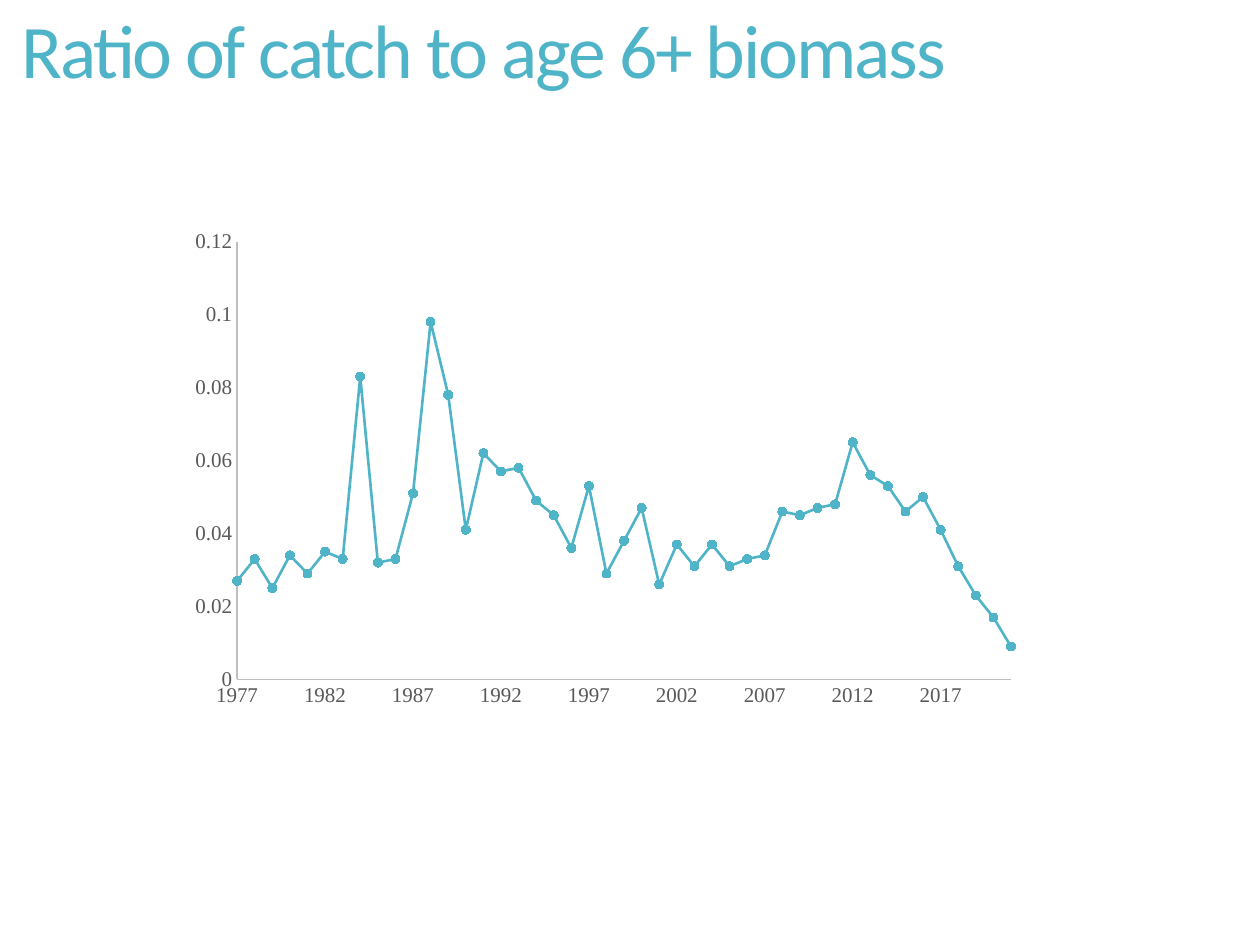
from dataclasses import dataclass

from lxml import etree
from pptx import Presentation
from pptx.chart import data as cd
from pptx.dml.color import RGBColor
from pptx.enum import chart as ce, text as te
from pptx.oxml import ns
from pptx.util import Inches, Pt

TEAL = RGBColor(0x50, 0xB4, 0xC8)
GREY = RGBColor(0x59, 0x59, 0x59)
RULE = RGBColor(0xBF, 0xBF, 0xBF)
FONT = "Times New Roman"

START = 1977
RATIOS = [
    0.027, 0.033, 0.025, 0.034, 0.029, 0.035, 0.033, 0.083, 0.032,
    0.033, 0.051, 0.098, 0.078, 0.041, 0.062, 0.057, 0.058, 0.049,
    0.045, 0.036, 0.053, 0.029, 0.038, 0.047, 0.026, 0.037, 0.031,
    0.037, 0.031, 0.033, 0.034, 0.046, 0.045, 0.047, 0.048, 0.065,
    0.056, 0.053, 0.046, 0.05, 0.041, 0.031, 0.023, 0.017, 0.009,
]


@dataclass
class Scale:
    low: float
    high: float
    step: float
    form: str


def add_title(slide, words: str) -> None:
    title = slide.shapes.title
    title.left, title.top = Inches(0.07), Inches(0.11)
    title.width, title.height = Inches(8.84), Inches(0.63)
    frame = title.text_frame
    frame.auto_size = te.MSO_AUTO_SIZE.NONE
    frame.vertical_anchor = te.MSO_ANCHOR.MIDDLE
    para = frame.paragraphs[0]
    para.alignment = te.PP_ALIGN.LEFT
    para.line_spacing = 0.9
    run = para.add_run()
    run.text = words
    run.font.name = "Calibri"
    run.font.size = Pt(43.2)
    run.font.color.rgb = TEAL
    run.font._element.set("spc", "-120")


def style_axis(axis, scale: Scale) -> None:
    axis.minimum_scale, axis.maximum_scale = scale.low, scale.high
    axis.major_unit = scale.step
    axis.has_major_gridlines = False
    axis.major_tick_mark = axis.minor_tick_mark = ce.XL_TICK_MARK.NONE
    axis.format.line.color.rgb = RULE
    axis.format.line.width = Pt(0.75)
    labels = axis.tick_labels
    labels.number_format = scale.form
    labels.number_format_is_linked = False
    labels.font.name = FONT
    labels.font.size = Pt(12)
    labels.font.color.rgb = GREY


def place_plot(chart, **box: float) -> None:
    """Fix the inner plot area, in fractions of the chart."""
    area = chart._chartSpace.chart.plotArea
    for old in area.findall(ns.qn("c:layout")):
        area.remove(old)
    layout = etree.Element(ns.qn("c:layout"))
    area.insert(0, layout)
    manual = etree.SubElement(layout, ns.qn("c:manualLayout"))
    parts = {"layoutTarget": "inner", "xMode": "edge", "yMode": "edge", **box}
    for name, value in parts.items():
        etree.SubElement(manual, ns.qn("c:" + name)).set("val", str(value))


def add_graph(slide) -> None:
    data = cd.XyChartData()
    points = data.add_series("Series 1")
    for year, ratio in enumerate(RATIOS, START):
        points.add_data_point(year, ratio)
    chart = slide.shapes.add_chart(
        ce.XL_CHART_TYPE.XY_SCATTER_LINES, Inches(1.41), Inches(1.76),
        Inches(6.75), Inches(3.95), data).chart
    chart.has_legend = chart.has_title = False
    chart.font.name, chart.font.size = FONT, Pt(12)
    chart.plots[0].vary_by_categories = False

    # Line and round markers
    line = chart.plots[0].series[0]
    line.smooth = False
    line.format.line.color.rgb = TEAL
    line.format.line.width = Pt(1.5)
    mark = line.marker
    mark.style, mark.size = ce.XL_MARKER_STYLE.CIRCLE, 5
    mark.format.fill.solid()
    mark.format.fill.fore_color.rgb = TEAL
    mark.format.line.color.rgb = TEAL

    # Axes
    last = START + len(RATIOS) - 1
    style_axis(chart.category_axis, Scale(START, last, 5, "General"))
    style_axis(chart.value_axis, Scale(0, 0.12, 0.02, "General"))
    place_plot(chart, x=0.07, y=0.04, w=0.91, h=0.88)


def main() -> None:
    deck = Presentation()
    deck.slide_width, deck.slide_height = Inches(10), Inches(7.5)
    slide = deck.slides.add_slide(deck.slide_layouts[5])
    add_title(slide, "Ratio of catch to age 6+ biomass")
    add_graph(slide)
    deck.save("out.pptx")


if __name__ == "__main__":
    main()
